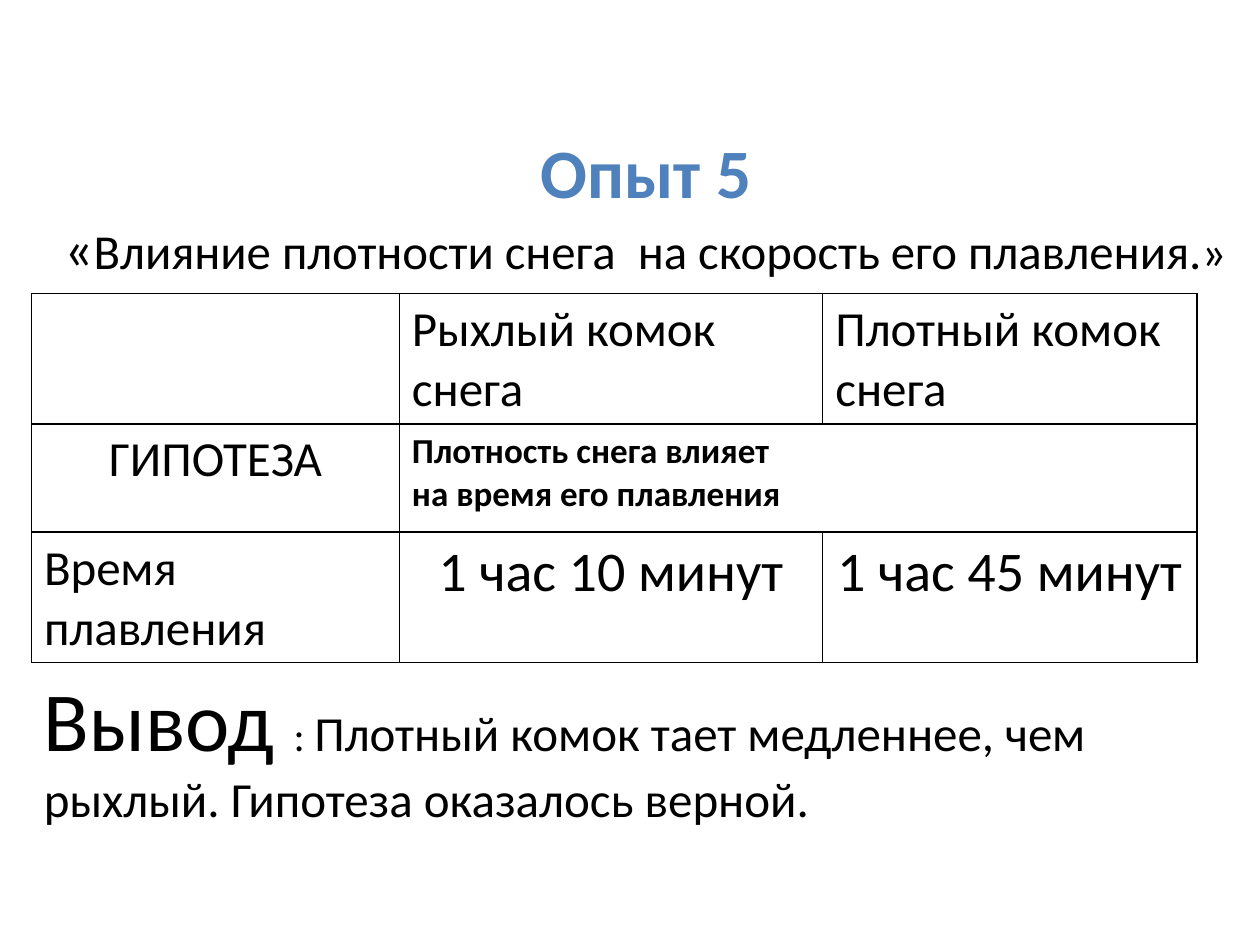
from typing import NamedTuple

import pptx
import pptx.dml.color
import pptx.enum.text
import pptx.oxml
import pptx.oxml.ns
import pptx.util
from pptx.util import Inches

BLACK = pptx.dml.color.RGBColor(0x00, 0x00, 0x00)
BLUE = pptx.dml.color.RGBColor(0x4F, 0x81, 0xBD)
FACE = "Calibri"
LEFT = pptx.enum.text.PP_ALIGN.LEFT
CENTER = pptx.enum.text.PP_ALIGN.CENTER


class Cell(NamedTuple):
    lines: tuple[str, ...] = ()
    size: float = 28
    bold: bool = False
    align: int = LEFT
    sides: str = "LRTB"


class Span(NamedTuple):
    text: str
    size: float
    color: pptx.dml.color.RGBColor = BLACK
    bold: bool = False
    ends: bool = False


COLS = (2.92, 3.36, 2.97)
ROW = 0.86
ROWS = (
    (Cell(), Cell(("Рыхлый комок снега",)), Cell(("Плотный комок снега",))),
    (
        Cell(("ГИПОТЕЗА",), align=CENTER),
        Cell(("Плотность снега влияет", "на время его плавления"), 20, True, sides="LTB"),
        Cell(sides="RTB"),
    ),
    (
        Cell(("Время плавления",)),
        Cell(("1 час 10 минут",), 32, align=CENTER),
        Cell(("1 час 45 минут",), 32, align=CENTER),
    ),
)
TITLE = (
    Span("Опыт 5", 39.6, BLUE, True, ends=True),
    Span("«", 32.4),
    Span("Влияние плотности снега  на скорость его плавления.»", 27.9),
)
RESULT = (
    Span("Вывод ", 48),
    Span(": ", 24),
    Span("Плотный комок тает медленнее, чем рыхлый. Гипотеза оказалось верной.", 28),
)


def style(font: pptx.text.text.Font, size: float, color: pptx.dml.color.RGBColor, bold: bool) -> None:
    font.name = FACE
    font.size = pptx.util.Pt(size)
    font.color.rgb = color
    font.bold = bold


def add_text(slide: pptx.slide.Slide, at: tuple, spans: tuple[Span, ...], align: int, anchor: int) -> None:
    box = slide.shapes.add_textbox(*map(Inches, at))
    frame = box.text_frame
    frame.word_wrap = True
    frame.vertical_anchor = anchor
    para = frame.paragraphs[0]
    para.alignment = align
    for span in spans:
        run = para.add_run()
        run.text = span.text
        style(run.font, span.size, span.color, span.bold)
        if span.ends:
            para.add_line_break()


def set_edges(cell: pptx.table._Cell, sides: str) -> None:
    """Draw thin black borders on the named sides and none on the others."""
    props = cell._tc.get_or_add_tcPr()
    for side in "LRTB":
        fill = f'<a:solidFill><a:srgbClr val="{BLACK}"/></a:solidFill>' if side in sides else "<a:noFill/>"
        props.append(pptx.oxml.parse_xml(
            f'<a:ln{side} {pptx.oxml.ns.nsdecls("a")} w="{pptx.util.Pt(1)}">{fill}</a:ln{side}>'
        ))


def fill_cell(cell: pptx.table._Cell, data: Cell) -> None:
    set_edges(cell, data.sides)
    cell.fill.background()
    cell.text_frame.text = "\n".join(data.lines)
    for para in cell.text_frame.paragraphs:
        para.alignment = data.align
        style(para.font, data.size, BLACK, data.bold)


def add_grid(slide: pptx.slide.Slide, left: float, top: float) -> None:
    grid = slide.shapes.add_table(
        len(ROWS), len(COLS), Inches(left), Inches(top), Inches(sum(COLS)), Inches(ROW * len(ROWS))
    ).table
    grid.first_row = False
    grid.horz_banding = False
    for col, width in zip(grid.columns, COLS):
        col.width = Inches(width)
    for row, cells in zip(grid.rows, ROWS):
        row.height = Inches(ROW)
        for cell, data in zip(row.cells, cells):
            fill_cell(cell, data)


def main() -> None:
    deck = pptx.Presentation()
    deck.slide_width = Inches(10)
    deck.slide_height = Inches(7.5)
    slide = deck.slides.add_slide(deck.slide_layouts[6])
    anchors = pptx.enum.text.MSO_ANCHOR
    add_text(slide, (0, 1, 10.25, 1.25), TITLE, CENTER, anchors.MIDDLE)
    add_grid(slide, 0.25, 2.33)
    add_text(slide, (0.25, 5.25, 9.25, 1.78), RESULT, LEFT, anchors.TOP)
    deck.save("out.pptx")


if __name__ == "__main__":
    main()
